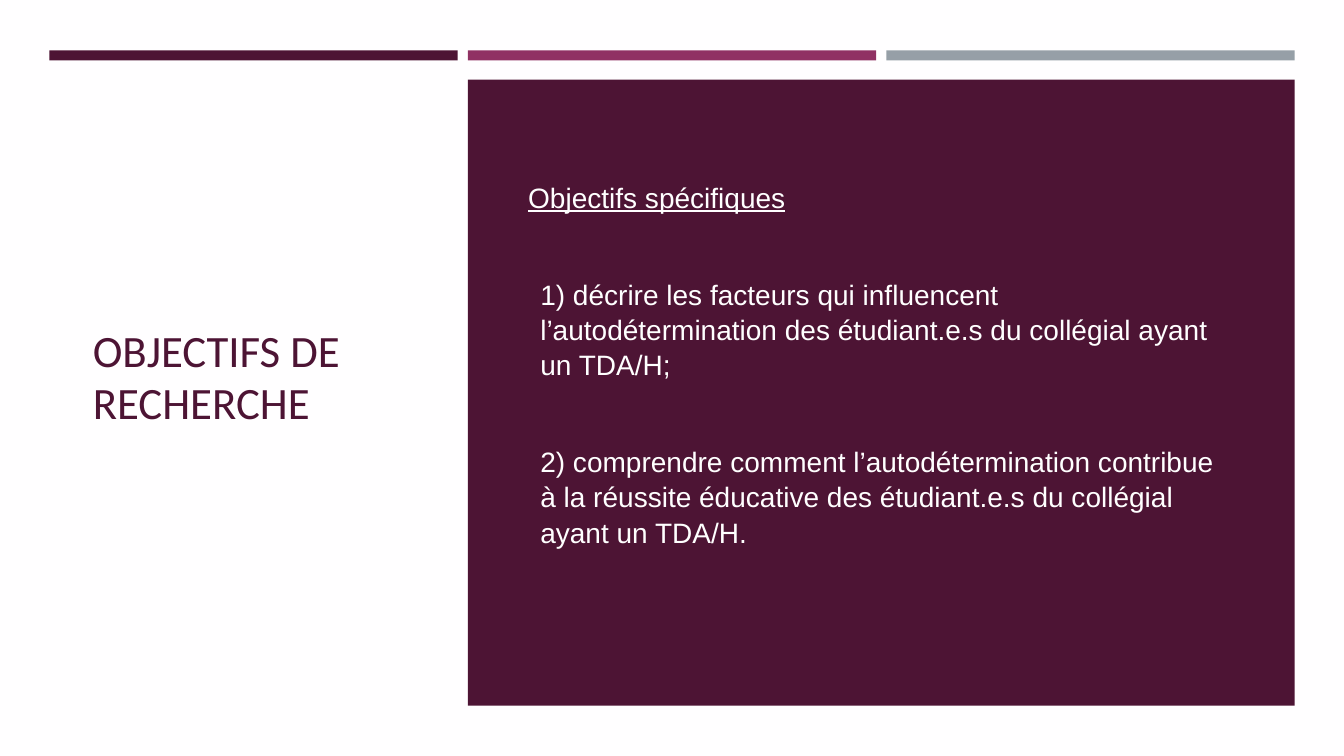
from pptx import Presentation
from pptx.dml.color import RGBColor
from pptx.enum.shapes import MSO_SHAPE
from pptx.enum.text import MSO_ANCHOR, PP_ALIGN
from pptx.util import Inches, Pt

RECTANGLE = MSO_SHAPE.RECTANGLE
TOP, MIDDLE = MSO_ANCHOR.TOP, MSO_ANCHOR.MIDDLE
LEFT = PP_ALIGN.LEFT
TITLE_ONLY = 5

PLUM, MAGENTA, GREY = "4D1434", "903163", "969FA7"
WHITE, PAPER = "FFFFFF", "FFFEFF"

HEADING = "Objectifs spécifiques"
OBJECTIVES = (
    "1) décrire les facteurs qui influencent l’autodétermination des "
    "étudiant.e.s du collégial ayant un TDA/H;",
    "2) comprendre comment l’autodétermination contribue à la réussite "
    "éducative des étudiant.e.s du collégial ayant un TDA/H.",
)


def set_fill(fill, colour):
    """Make a fill solid in a hex colour."""
    fill.solid()
    fill.fore_color.rgb = RGBColor.from_string(colour)


def add_block(page, box, colour):
    """Draw a plain rectangle without outline or shadow."""
    block = page.shapes.add_shape(RECTANGLE, *map(Inches, box))
    set_fill(block.fill, colour)
    block.line.fill.background()
    block.shadow.inherit = False


def add_span(para, text, font, size, colour):
    """Add one formatted run to a paragraph and return it."""
    span = para.add_run()
    span.text = text
    span.font.name = font
    span.font.size = Pt(size)
    set_fill(span.font.fill, colour)
    return span


def add_title(page, box):
    """Place the slide title in the left column."""
    title = page.shapes.title
    title.left, title.top, title.width, title.height = map(Inches, box)
    frame = title.text_frame
    frame.word_wrap = True
    frame.vertical_anchor = MIDDLE
    para = frame.paragraphs[0]
    para.alignment = LEFT
    para.line_spacing = 0.97
    add_span(para, "OBJECTIFS DE RECHERCHE", "Calibri", 32, PLUM)


def add_bars(page, box, gap=0.1):
    """Spread the three coloured bars evenly across the box."""
    left, top, width, height = box
    colours = (PLUM, MAGENTA, GREY)
    bar = (width - gap * (len(colours) - 1)) / len(colours)
    for index, colour in enumerate(colours):
        add_block(page, (left + index * (bar + gap), top, bar, height), colour)


def add_objectives(page, box):
    """Draw the dark panel with its heading and numbered objectives."""
    left, top, width, height = box
    add_block(page, box, PLUM)
    text_box = (left + 0.5, top + 0.38, width - 0.98, height - 1.06)
    frame = page.shapes.add_textbox(*map(Inches, text_box)).text_frame
    frame.word_wrap = True
    frame.vertical_anchor = TOP
    frame.margin_top = Inches(0.6)
    for index, text in enumerate((HEADING, *OBJECTIVES)):
        para = frame.add_paragraph() if index else frame.paragraphs[0]
        para.alignment = LEFT
        para.line_spacing = 1.05
        para.space_after = Pt(6)
        span = add_span(para, text, "Arial", 20, WHITE)
        if index:
            para.space_before = Pt(38)
            para._p.get_or_add_pPr().set("marL", str(Inches(0.12)))
        else:
            span.font.underline = True


def main():
    """Build the slide and save the deck."""
    deck = Presentation()
    deck.slide_width, deck.slide_height = Inches(13.33), Inches(7.5)
    page = deck.slides.add_slide(deck.slide_layouts[TITLE_ONLY])
    set_fill(page.background.fill, PAPER)
    add_title(page, (0.82, 1.17, 3.34, 5.15))
    add_bars(page, (0.49, 0.5, 12.35, 0.1))
    add_objectives(page, (4.64, 0.79, 8.2, 6.21))
    deck.save("out.pptx")


if __name__ == "__main__":
    main()
